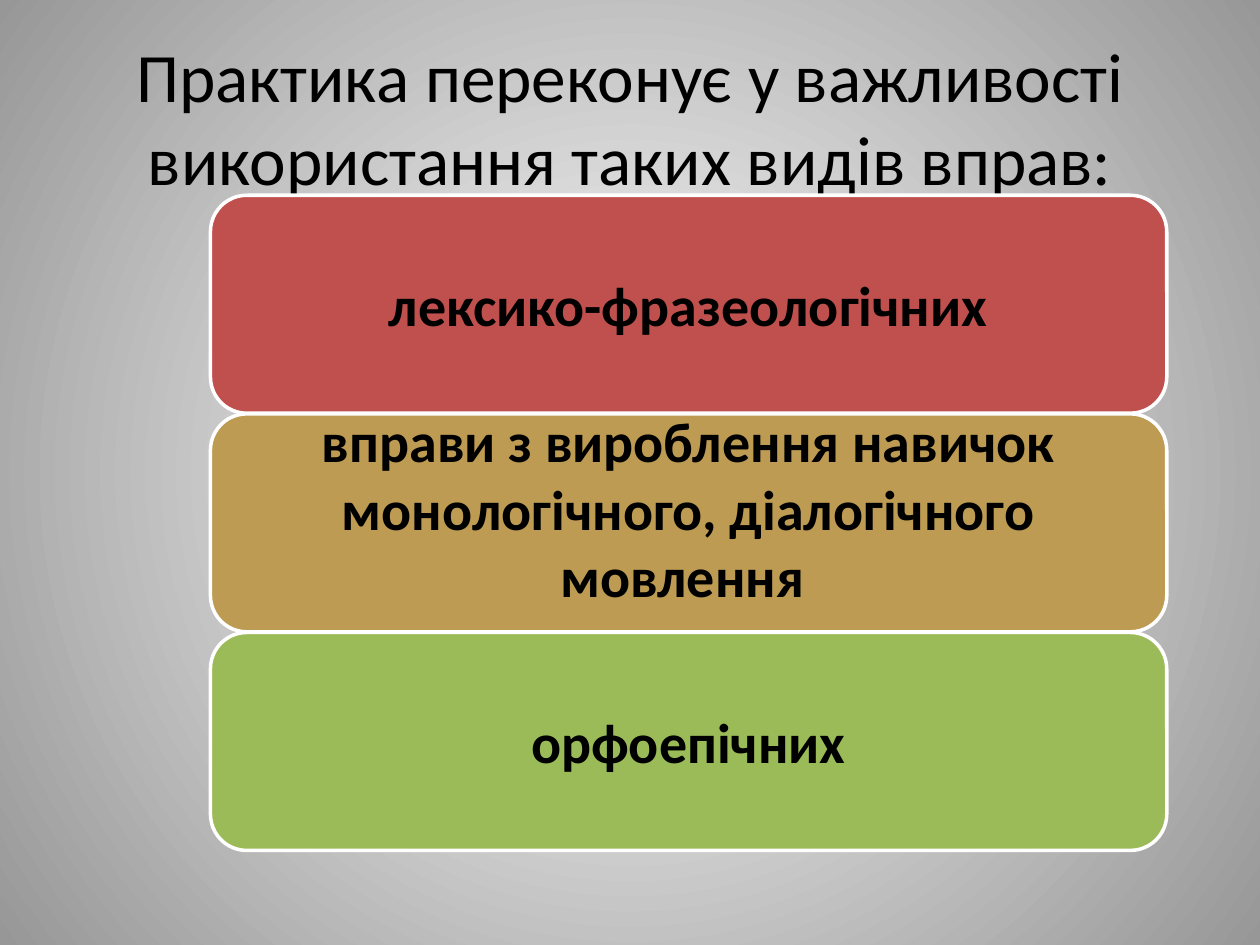
from lxml import etree
from pptx import Presentation
from pptx.dml.color import RGBColor
from pptx.enum.shapes import MSO_SHAPE as Shape
from pptx.enum.text import MSO_ANCHOR as Anchor, MSO_AUTO_SIZE as AutoSize, PP_ALIGN as Align
from pptx.oxml.ns import qn
from pptx.util import Inches, Pt

FONT = "Calibri"
BLACK = RGBColor(0, 0, 0)
WHITE = RGBColor(0xFF, 0xFF, 0xFF)
GRAY = RGBColor(0x97, 0x97, 0x97)
RED = RGBColor(0xC0, 0x50, 0x4D)
OCHRE = RGBColor(0xBD, 0x9B, 0x53)
GREEN = RGBColor(0x9B, 0xBB, 0x59)

CARD_LEFT, CARD_TOP = 1.67, 1.55
CARD_WIDTH, CARD_HEIGHT = 7.59, 1.73
CARD_PITCH = 1.735

# Text, fill, top inset and bottom inset; the long text sits higher in its card
EXERCISES = [
    ("лексико-фразеологічних", RED, 0.13, 0.13),
    ("вправи з вироблення навичок монологічного, діалогічного мовлення ", OCHRE, 0, 0.24),
    ("орфоепічних", GREEN, 0.13, 0.13),
]


def set_background(slide):
    """Fill the background with a circular gradient, white in the centre."""
    fill = slide.background.fill
    fill.gradient()
    for stop, color in zip(fill.gradient_stops, (WHITE, GRAY)):
        stop.color.rgb = color
    gradient = slide.background._cSld.find(".//" + qn("a:gradFill"))
    linear = gradient.find(qn("a:lin"))
    circle = etree.Element(qn("a:path"), {"path": "circle"})
    centre = dict.fromkeys("ltrb", "50000")
    etree.SubElement(circle, qn("a:fillToRect"), centre)
    gradient.replace(linear, circle)


def write_text(frame, text, size, bold=False):
    frame.word_wrap = True
    frame.auto_size = AutoSize.NONE
    frame.vertical_anchor = Anchor.MIDDLE
    para = frame.paragraphs[0]
    para.alignment = Align.CENTER
    span = para.add_run()
    span.text = text
    span.font.name = FONT
    span.font.size = Pt(size)
    span.font.bold = bold
    span.font.color.rgb = BLACK


def add_title(slide, text):
    title = slide.shapes.title
    title.left, title.top = Inches(0.5), Inches(0.3)
    title.width, title.height = Inches(9), Inches(1.25)
    write_text(title.text_frame, text, 39.6)


def add_card(slide, top, text, color, inset_top, inset_bottom):
    card = slide.shapes.add_shape(
        Shape.ROUNDED_RECTANGLE, Inches(CARD_LEFT), Inches(top),
        Inches(CARD_WIDTH), Inches(CARD_HEIGHT))
    card.shadow.inherit = False
    card.fill.solid()
    card.fill.fore_color.rgb = color
    card.line.color.rgb = WHITE
    card.line.width = Pt(2)
    frame = card.text_frame
    frame.margin_left = frame.margin_right = Inches(0.13)
    frame.margin_top = Inches(inset_top)
    frame.margin_bottom = Inches(inset_bottom)
    write_text(frame, text, 32, bold=True)


def main():
    deck = Presentation()
    deck.slide_width, deck.slide_height = Inches(10), Inches(7.5)
    slide = deck.slides.add_slide(deck.slide_layouts[5])
    set_background(slide)
    add_title(slide, "Практика переконує у важливості використання таких видів вправ:")
    for row, exercise in enumerate(EXERCISES):
        add_card(slide, CARD_TOP + row * CARD_PITCH, *exercise)
    deck.save("out.pptx")


if __name__ == "__main__":
    main()
